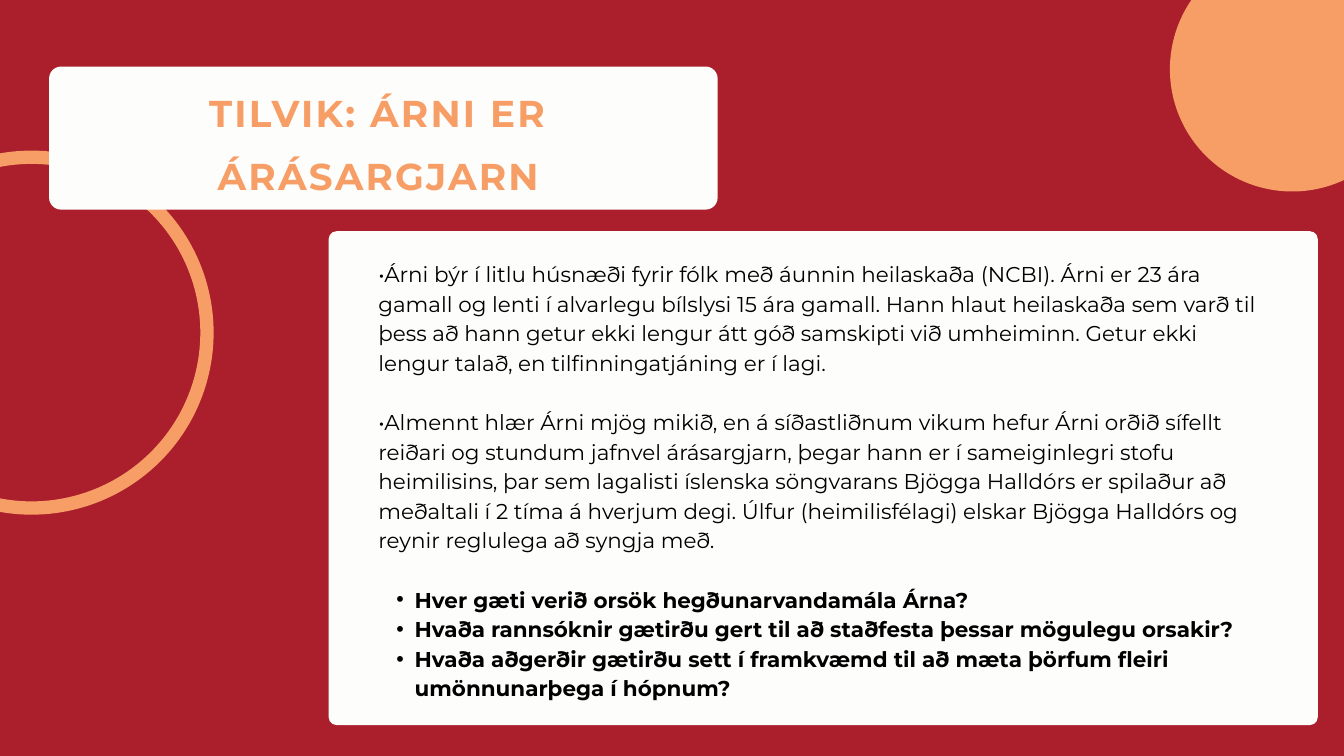
import pptx
import pptx.util
import pptx.dml.color
import pptx.enum.shapes
import pptx.enum.text
import pptx.oxml.ns
from lxml import etree

TITLE = "TILVIK: ÁRNI ER ÁRÁSARGJARN"
STORY = [
    "•Árni býr í litlu húsnæði fyrir fólk með áunnin heilaskaða (NCBI). Árni er 23 ára "
    "gamall og lenti í alvarlegu bílslysi 15 ára gamall. Hann hlaut heilaskaða sem varð til "
    "þess að hann getur ekki lengur átt góð samskipti við umheiminn. Getur ekki lengur "
    "talað, en tilfinningatjáning er í lagi.",
    "•Almennt hlær Árni mjög mikið, en á síðastliðnum vikum hefur Árni orðið sífellt "
    "reiðari og stundum jafnvel árásargjarn, þegar hann er í sameiginlegri stofu "
    "heimilisins, þar sem lagalisti íslenska söngvarans Bjögga Halldórs er spilaður að "
    "meðaltali í 2 tíma á hverjum degi. Úlfur (heimilisfélagi) elskar Bjögga Halldórs og "
    "reynir reglulega að syngja með.",
]
ASKS = [
    "Hver gæti verið orsök hegðunarvandamála Árna?",
    "Hvaða rannsóknir gætirðu gert til að staðfesta þessar mögulegu orsakir?",
    "Hvaða aðgerðir gætirðu sett í framkvæmd til að mæta þörfum fleiri "
    "umönnunarþega í hópnum?",
]
COLORS = {"red": "AB1F2C", "peach": "F79E67", "white": "FDFDFB", "black": "000000"}
FACE = "Montserrat"
WIDE, HIGH = 20, 11.25
LINE = 31.7  # body line height in points
INDENT = 0.27

Inches, Pt = pptx.util.Inches, pptx.util.Pt
KIND = pptx.enum.shapes.MSO_SHAPE

deck = pptx.Presentation()
deck.slide_width, deck.slide_height = Inches(WIDE), Inches(HIGH)
slide = deck.slides.add_slide(deck.slide_layouts[6])


def color(name):
    return pptx.dml.color.RGBColor.from_string(COLORS[name])


def paint(fill, name):
    fill.solid()
    fill.fore_color.rgb = color(name)


def shape(kind, left, top, width, height):
    item = slide.shapes.add_shape(kind, *map(Inches, (left, top, width, height)))
    item.shadow.inherit = False
    return item


def panel(left, top, width, height, radius):
    item = shape(KIND.ROUNDED_RECTANGLE, left, top, width, height)
    item.adjustments[0] = radius / min(width, height)
    paint(item.fill, "white")
    item.line.fill.background()


def circle(x, y, radius):
    return shape(KIND.OVAL, x - radius, y - radius, 2 * radius, 2 * radius)


def frame(left, top, width, height):
    """Add a wrapping text box without margins and return its text frame."""
    text = slide.shapes.add_textbox(*map(Inches, (left, top, width, height))).text_frame
    text.word_wrap = True
    text.margin_left = text.margin_right = text.margin_top = text.margin_bottom = 0
    return text


def write(para, words, size, name, lead, bold=False):
    run = para.add_run()
    run.text = words
    para.line_spacing = Pt(lead)
    font = para.font
    font.name, font.size, font.bold = FACE, Pt(size), bold
    font.color.rgb = color(name)
    return run


def bullet(para):
    props = para._p.get_or_add_pPr()
    props.set("marL", str(Inches(2 * INDENT)))
    props.set("indent", str(-Inches(INDENT)))
    for tag, key, value in (("buFont", "typeface", "Arial"), ("buChar", "char", "•")):
        etree.SubElement(props, pptx.oxml.ns.qn("a:" + tag)).set(key, value)


paint(slide.background.fill, "red")

panel(4.89, 3.44, 14.72, 7.35, 0.12)
body = frame(5.63, 3.83, 13.25, 6.6)
for i, words in enumerate(STORY + ASKS):
    para = body.paragraphs[0] if i == 0 else body.add_paragraph()
    ask = i >= len(STORY)
    if 0 < i <= len(STORY):
        para.space_before = Pt(LINE)
    if ask:
        bullet(para)
    write(para, words, 23, "black", LINE, ask)

ring = circle(0.47, 4.95, 2.61)
ring.fill.background()
paint(ring.line.fill, "peach")
ring.line.width = Pt(14.25)

panel(0.73, 0.99, 9.95, 2.13, 0.18)
head = frame(1.41, 1.06, 8.44, 1.8).paragraphs[0]
head.alignment = pptx.enum.text.PP_ALIGN.CENTER
run = write(head, TITLE, 40, "peach", 68, True)
run._r.get_or_add_rPr().set("spc", "240")

sun = circle(19.23, 1.03, 1.82)
paint(sun.fill, "peach")
sun.line.fill.background()

deck.save("out.pptx")
